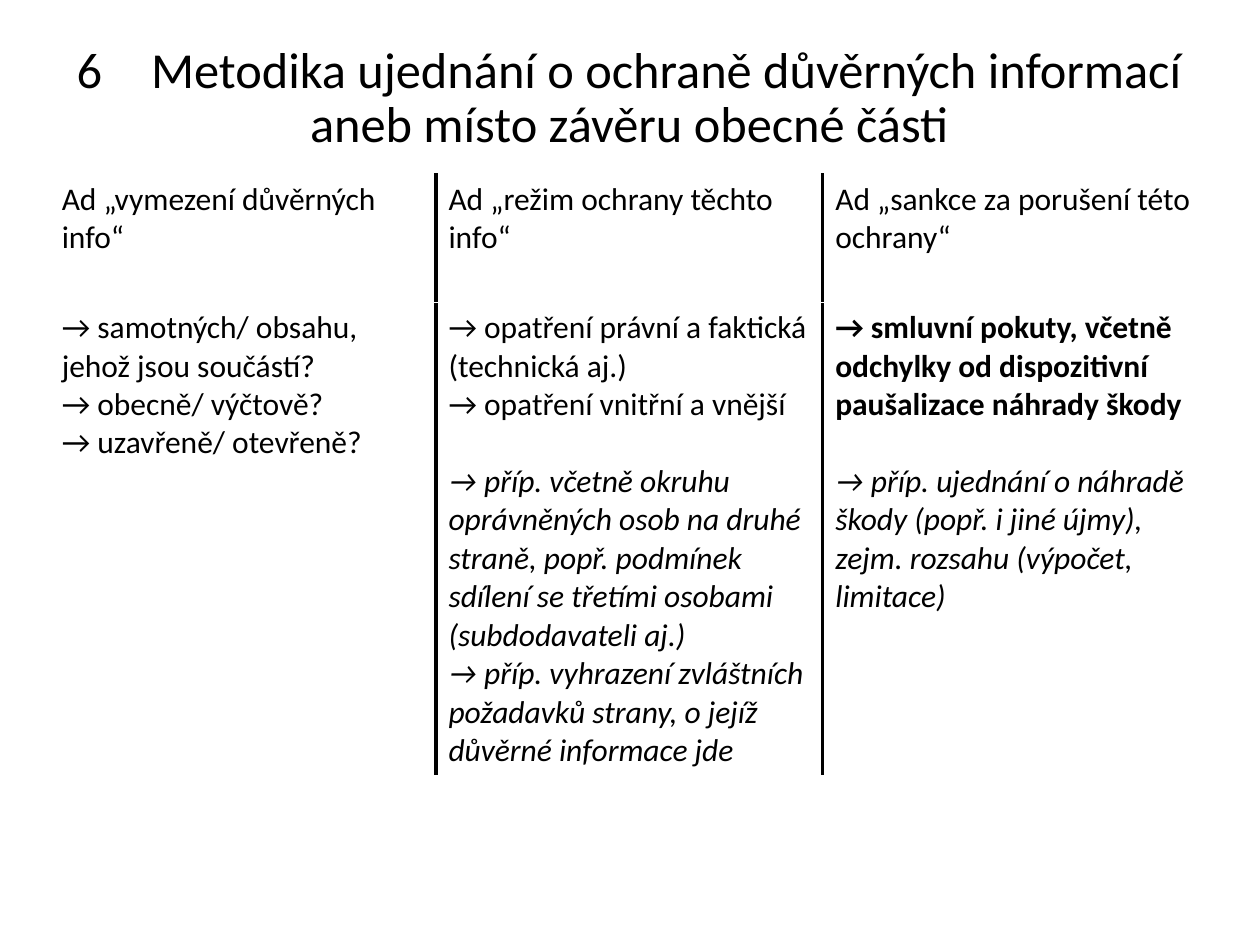
from dataclasses import dataclass

from lxml.etree import SubElement
from pptx import Presentation
from pptx.dml.color import RGBColor
from pptx.enum.text import MSO_ANCHOR, PP_ALIGN
from pptx.oxml.ns import qn
from pptx.util import Inches, Pt


@dataclass(frozen=True)
class Theme:
    font: str = "Calibri"
    ink: str = "000000"
    title_size: float = 28.8
    body_size: float = 18
    rule_width: float = 2.25
    gap: float = 22


THEME = Theme()
TITLE = "6\t Metodika ujednání o ochraně důvěrných informací aneb místo závěru obecné části"
HEADINGS = [
    "Ad „vymezení důvěrných info“",
    "Ad „režim ochrany těchto info“",
    "Ad „sankce za porušení této ochrany“",
]
POINTS = [
    [
        ("→ samotných/ obsahu, jehož jsou součástí?", "plain"),
        ("→ obecně/ výčtově?", "plain"),
        ("→ uzavřeně/ otevřeně?", "plain"),
    ],
    [
        ("→ opatření právní a faktická (technická aj.)", "plain"),
        ("→ opatření vnitřní a vnější", "plain"),
        ("→ příp. včetně okruhu oprávněných osob na druhé straně, popř. podmínek "
         "sdílení se třetími osobami (subdodavateli aj.)", "italic"),
        ("→ příp. vyhrazení zvláštních požadavků strany, o jejíž důvěrné informace jde", "italic"),
    ],
    [
        ("→ smluvní pokuty, včetně odchylky od dispozitivní paušalizace náhrady škody", "bold"),
        ("→ příp. ujednání o náhradě škody (popř. i jiné újmy), zejm. rozsahu "
         "(výpočet, limitace)", "italic"),
    ],
]


def add_run(p, text, size, style="plain"):
    r = p.add_run()
    r.text = text
    r.font.name = THEME.font
    r.font.size = Pt(size)
    r.font.color.rgb = RGBColor.from_string(THEME.ink)
    r.font.bold = style == "bold"
    r.font.italic = style == "italic"


def fill_cell(cell, points):
    cell.fill.background()
    tf = cell.text_frame
    previous = points[0][1]
    for i, (text, style) in enumerate(points):
        p = tf.add_paragraph() if i else tf.paragraphs[0]
        if style != previous:
            p.space_before = Pt(THEME.gap)
        add_run(p, text, THEME.body_size, style)
        previous = style


def add_borders(cell, sides):
    tc_pr = cell._tc.get_or_add_tcPr()
    for i, side in enumerate(sides):
        ln = SubElement(tc_pr, qn(f"a:ln{side}"), w=str(Pt(THEME.rule_width)))
        fill = SubElement(ln, qn("a:solidFill"))
        SubElement(fill, qn("a:srgbClr"), val=THEME.ink)
        tc_pr.insert(i, ln)


def add_title(slide, left, top, width, height):
    tf = slide.shapes.add_textbox(left, top, width, height).text_frame
    tf.word_wrap = True
    tf.vertical_anchor = MSO_ANCHOR.MIDDLE
    p = tf.paragraphs[0]
    p.alignment = PP_ALIGN.CENTER
    p.line_spacing = 0.9
    add_run(p, TITLE, THEME.title_size)


def add_columns(slide, left, top, width, row_heights):
    count = len(HEADINGS)
    table = slide.shapes.add_table(2, count, left, top, width, sum(row_heights)).table
    table.first_row = False
    table.horz_banding = False
    for row, height in zip(table.rows, row_heights):
        row.height = height
    for col, (heading, points) in enumerate(zip(HEADINGS, POINTS)):
        sides = ("L" if col else "") + ("R" if col < count - 1 else "")
        for row, content in enumerate(([(heading, "plain")], points)):
            cell = table.cell(row, col)
            fill_cell(cell, content)
            add_borders(cell, sides)


def main():
    prs = Presentation()
    prs.slide_width, prs.slide_height = Inches(10), Inches(7.5)
    slide = prs.slides.add_slide(prs.slide_layouts[6])
    left, width = Inches(0.39), Inches(9.21)
    add_title(slide, left, Inches(0.39), width, Inches(0.79))
    add_columns(slide, left, Inches(1.38), width, [Inches(1.02), Inches(3.76)])
    prs.save("out.pptx")


if __name__ == "__main__":
    main()
